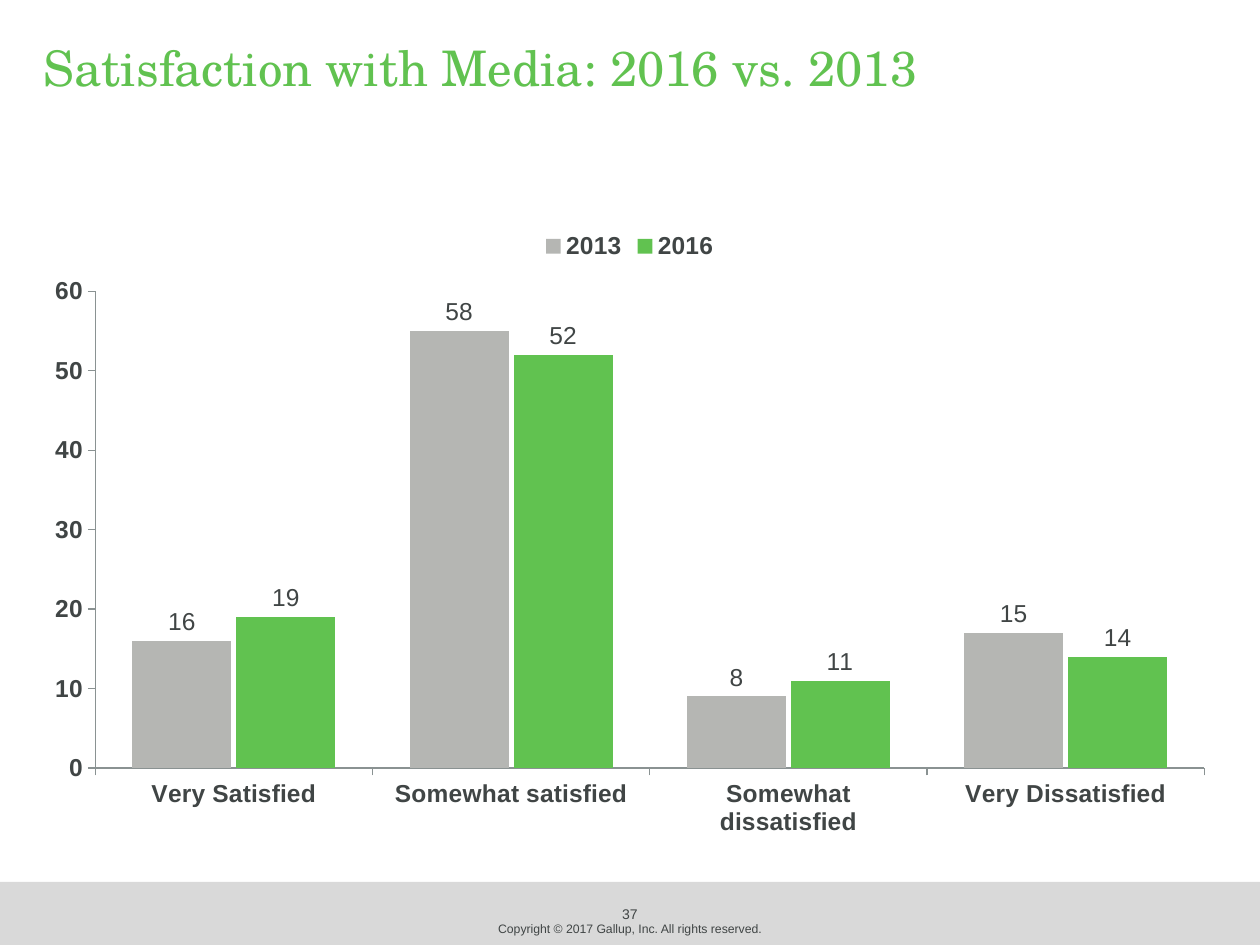
from pptx import Presentation
from pptx.chart.data import CategoryChartData
from pptx.dml.color import RGBColor
from pptx.enum.chart import XL_CHART_TYPE, XL_LABEL_POSITION, XL_LEGEND_POSITION, XL_TICK_MARK
from pptx.enum.shapes import MSO_SHAPE
from pptx.enum.text import MSO_ANCHOR, PP_ALIGN
from pptx.util import Cm, Pt

HUES = {"green": "61C250", "gray": "B5B6B3", "text": "404545", "axis": "8A9292", "band": "D9D9D9"}
GROUPS = ["Very Satisfied", "Somewhat satisfied", "Somewhat dissatisfied", "Very Dissatisfied"]
YEARS = [
    ("2013", "gray", [16, 55, 9, 17], ["16", "58", "8", "15"]),
    ("2016", "green", [19, 52, 11, 14], ["19", "52", "11", "14"]),
]


def hue(name):
    """Return the named colour."""
    return RGBColor.from_string(HUES[name])


def style(font, size, color="text", bold=False, face="Arial"):
    """Set the look of a font."""
    font.name, font.size, font.bold = face, Pt(size), bold
    font.color.rgb = hue(color)


def add_title(slide, left, top, width, height):
    """Place and format the title."""
    title = slide.shapes.title
    title.left, title.top, title.width, title.height = left, top, width, height
    frame = title.text_frame
    frame.text = "Satisfaction with Media: 2016 vs. 2013"
    frame.vertical_anchor = MSO_ANCHOR.TOP
    line = frame.paragraphs[0]
    line.alignment = PP_ALIGN.LEFT
    style(line.font, 28, "green", face="TeX Gyre Schola")


def format_axis(axis):
    """Format one chart axis."""
    axis.has_major_gridlines = False
    axis.major_tick_mark = XL_TICK_MARK.OUTSIDE
    axis.minor_tick_mark = XL_TICK_MARK.NONE
    axis.format.line.color.rgb = hue("axis")
    axis.format.line.width = Pt(0.75)
    style(axis.tick_labels.font, 14, bold=True)


def format_series(series, color, labels):
    """Colour one series and label its columns."""
    series.format.fill.solid()
    series.format.fill.fore_color.rgb = hue(color)
    for index, text in enumerate(labels):
        label = series.points[index].data_label
        label.text_frame.text = text
        style(label.text_frame.paragraphs[0].runs[0].font, 14)
        label.position = XL_LABEL_POSITION.OUTSIDE_END


def add_columns(slide, left, top, width, height):
    """Place the column chart of both years."""
    data = CategoryChartData()
    data.categories = GROUPS
    for name, _, values, _ in YEARS:
        data.add_series(name, values)
    kind = XL_CHART_TYPE.COLUMN_CLUSTERED
    chart = slide.shapes.add_chart(kind, left, top, width, height, data).chart
    style(chart.font, 12, bold=True)
    chart.has_title = False
    chart.has_legend = True
    chart.legend.position = XL_LEGEND_POSITION.TOP
    chart.legend.include_in_layout = False
    style(chart.legend.font, 14, bold=True)
    plot = chart.plots[0]
    plot.gap_width, plot.overlap, plot.vary_by_categories = 75, -5, False
    for axis in (chart.category_axis, chart.value_axis):
        format_axis(axis)
    scale = chart.value_axis
    scale.minimum_scale, scale.maximum_scale, scale.major_unit = 0, 60, 10
    for series, (_, color, _, labels) in zip(plot.series, YEARS):
        format_series(series, color, labels)


def add_footer(slide, left, top, width, height):
    """Place the footer band with page number and copyright."""
    band = slide.shapes.add_shape(MSO_SHAPE.RECTANGLE, left, top, width, height)
    band.shadow.inherit = False
    band.fill.solid()
    band.fill.fore_color.rgb = hue("band")
    band.line.fill.background()
    notes = [
        ("37", 8, Cm(0.33), Cm(1.27), Cm(0.61)),
        ("Copyright © 2017 Gallup, Inc. All rights reserved.", 7, Cm(0.66), Cm(9.53), Cm(0.56)),
    ]
    for text, size, drop, wide, tall in notes:
        box = slide.shapes.add_textbox(left + (width - wide) // 2, top + drop, wide, tall)
        frame = box.text_frame
        frame.text = text
        frame.word_wrap = False
        frame.vertical_anchor = MSO_ANCHOR.MIDDLE
        line = frame.paragraphs[0]
        line.alignment = PP_ALIGN.CENTER
        style(line.font, size)


def main():
    """Build and save the slide."""
    deck = Presentation()
    deck.slide_width, deck.slide_height = Cm(25.4), Cm(19.05)
    slide = deck.slides.add_slide(deck.slide_layouts[5])
    edge, wide = Cm(0.63), Cm(24.13)
    add_footer(slide, 0, Cm(17.78), deck.slide_width, Cm(1.27))
    add_columns(slide, edge, Cm(4.4), wide, Cm(12.7))
    add_title(slide, edge, edge, wide, Cm(1.45))
    deck.save("out.pptx")


if __name__ == "__main__":
    main()
